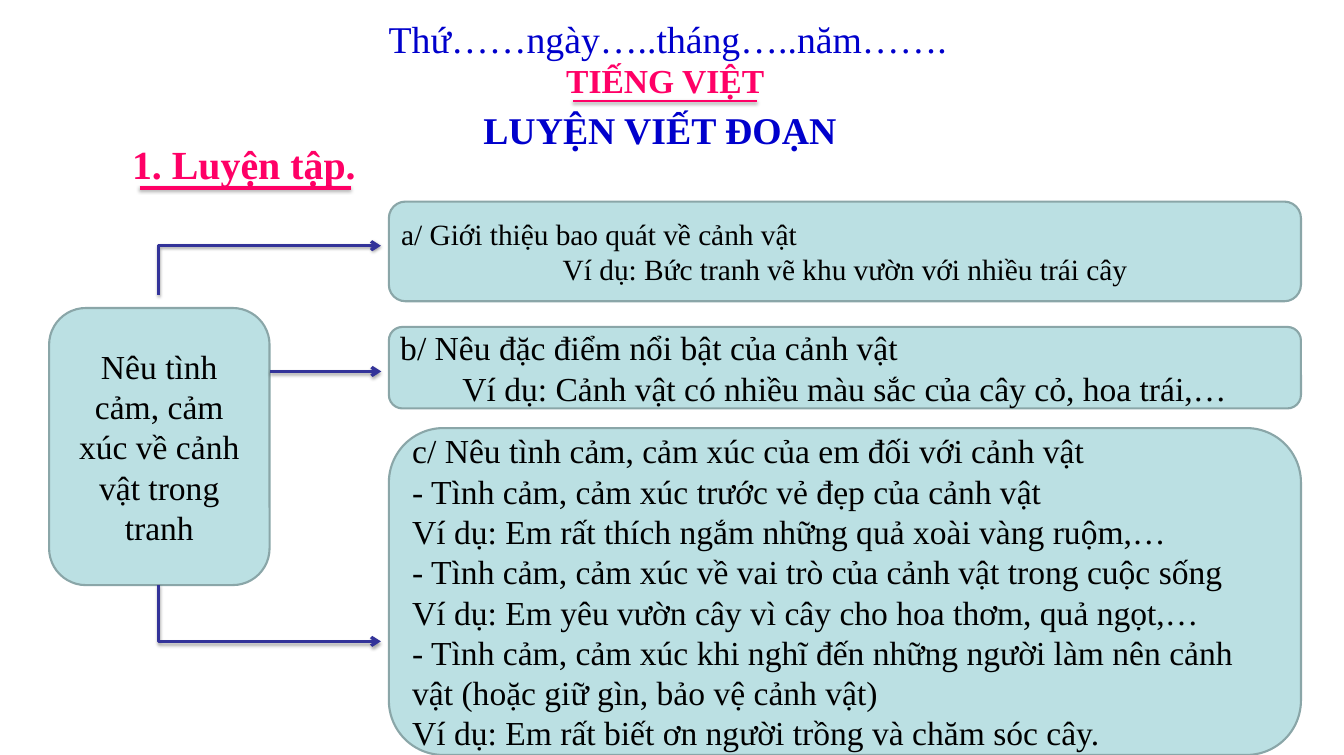
import pptx
import pptx.dml.color
import pptx.enum.shapes
import pptx.enum.text
import pptx.oxml
import pptx.oxml.ns
import pptx.util
from pptx.util import Inches

LEFT = pptx.enum.text.PP_ALIGN.LEFT
CENTER = pptx.enum.text.PP_ALIGN.CENTER
STRAIGHT = pptx.enum.shapes.MSO_CONNECTOR.STRAIGHT
ELBOW = pptx.enum.shapes.MSO_CONNECTOR.ELBOW
PINK, BLUE, INDIGO = "FF0066", "0000CC", "333399"


def color(hex_string):
    return pptx.dml.color.RGBColor.from_string(hex_string)


def write(shape, lines, size, hex_color, bold=False):
    """Fill a shape with (text, alignment) paragraphs in one style."""
    frame = shape.text_frame
    frame.text = "\n".join(text for text, _ in lines)
    for para, (_, alignment) in zip(frame.paragraphs, lines):
        para.alignment = alignment
        for span in para.runs:
            span.font.name = "Times New Roman"
            span.font.size = pptx.util.Pt(size)
            span.font.bold = bold
            span.font.color.rgb = color(hex_color)


deck = pptx.Presentation()
deck.slide_width, deck.slide_height = Inches(17.8), Inches(10)
page = deck.slides.add_slide(deck.slide_layouts[6])

# Headings
headings = [
    ("Thứ……ngày…..tháng…..năm…….", 5.05, 0.16, 7.67, 0.71, 36, BLUE, False, LEFT),
    ("TIẾNG VIỆT", 7.4, 0.75, 2.85, 0.64, 32, PINK, True, LEFT),
    ("1. Luyện tập.", 1.65, 1.8, 4.58, 0.74, 38, PINK, True, LEFT),
    ("LUYỆN VIẾT ĐOẠN", 6.28, 1.37, 4.92, 0.71, 36, BLUE, True, CENTER),
]
for text, left, top, width, height, size, hex_color, bold, alignment in headings:
    box = page.shapes.add_textbox(Inches(left), Inches(top), Inches(width), Inches(height))
    box.text_frame.word_wrap = alignment == LEFT and size == 38
    write(box, [(text, alignment)], size, hex_color, bold)

# Topic and its three parts
part_left, part_width = 5.15, 12.08
cards = [
    (0.65, 4.08, 2.92, 3.67, 32,
     [("Nêu tình cảm, cảm xúc về cảnh vật trong tranh", CENTER)]),
    (part_left, 2.67, part_width, 1.32, 28,
     [("a/ Giới thiệu bao quát về cảnh vật", LEFT),
      ("Ví dụ: Bức tranh vẽ khu vườn với nhiều trái cây", CENTER)]),
    (part_left, 4.33, part_width, 1.08, 32,
     [("b/ Nêu đặc điểm nổi bật của cảnh vật", LEFT),
      ("Ví dụ: Cảnh vật có nhiều màu sắc của cây cỏ, hoa trái,…", CENTER)]),
    (part_left, 5.67, part_width, 4.33, 32,
     [("c/ Nêu tình cảm, cảm xúc của em đối với cảnh vật", LEFT),
      ("- Tình cảm, cảm xúc trước vẻ đẹp của cảnh vật", LEFT),
      ("Ví dụ: Em rất thích ngắm những quả xoài vàng ruộm,…", LEFT),
      ("- Tình cảm, cảm xúc về vai trò của cảnh vật trong cuộc sống", LEFT),
      ("Ví dụ: Em yêu vườn cây vì cây cho hoa thơm, quả ngọt,…", LEFT),
      ("- Tình cảm, cảm xúc khi nghĩ đến những người làm nên cảnh vật "
       "(hoặc giữ gìn, bảo vệ cảnh vật)", LEFT),
      ("Ví dụ: Em rất biết ơn người trồng và chăm sóc cây.", LEFT)]),
]
for left, top, width, height, size, lines in cards:
    card = page.shapes.add_shape(
        pptx.enum.shapes.MSO_SHAPE.FLOWCHART_ALTERNATE_PROCESS,
        Inches(left), Inches(top), Inches(width), Inches(height))
    card.shadow.inherit = False
    card.fill.solid()
    card.fill.fore_color.rgb = color("BBE0E3")
    card.line.color.rgb = color("8AA6A8")
    card.line.width = pptx.util.Pt(2)
    card.text_frame.word_wrap = True
    card.text_frame.vertical_anchor = pptx.enum.text.MSO_ANCHOR.MIDDLE
    write(card, lines, size, "000000")

# Underlines and arrows; elbow ends are given before the quarter turn
connectors = [
    (STRAIGHT, 7.59, 1.34, 10.03, 1.34, PINK, 2, 0),
    (STRAIGHT, 1.85, 2.49, 4.65, 2.49, PINK, 3, 0),
    (ELBOW, 3.9, 5.05, 3.25, 2.11, INDIGO, 3, 90),
    (STRAIGHT, 3.58, 4.92, 5.05, 4.92, INDIGO, 3, 0),
    (ELBOW, 3.95, 6.65, 3.2, 9.59, INDIGO, 3, 270),
]
namespace = pptx.oxml.ns.nsdecls("a")
for kind, x1, y1, x2, y2, hex_color, width, turn in connectors:
    connector = page.shapes.add_connector(kind, Inches(x1), Inches(y1), Inches(x2), Inches(y2))
    connector.line.color.rgb = color(hex_color)
    connector.line.width = pptx.util.Pt(width)
    properties = connector._element.spPr
    if kind == ELBOW:
        properties.find(pptx.oxml.ns.qn("a:prstGeom")).set("prst", "bentConnector2")
        properties.find(pptx.oxml.ns.qn("a:xfrm")).set("rot", str(turn * 60000))
    if hex_color == INDIGO:
        properties.find(pptx.oxml.ns.qn("a:ln")).append(
            pptx.oxml.parse_xml(f'<a:tailEnd {namespace} type="arrow"/>'))
    opacity, distance = (38000, 20000) if width == 2 else (35000, 23000)
    properties.append(pptx.oxml.parse_xml(
        f'<a:effectLst {namespace}><a:outerShdw blurRad="40000" dist="{distance}" '
        'dir="5400000" rotWithShape="0"><a:srgbClr val="000000">'
        f'<a:alpha val="{opacity}"/></a:srgbClr></a:outerShdw></a:effectLst>'))

deck.save("out.pptx")
